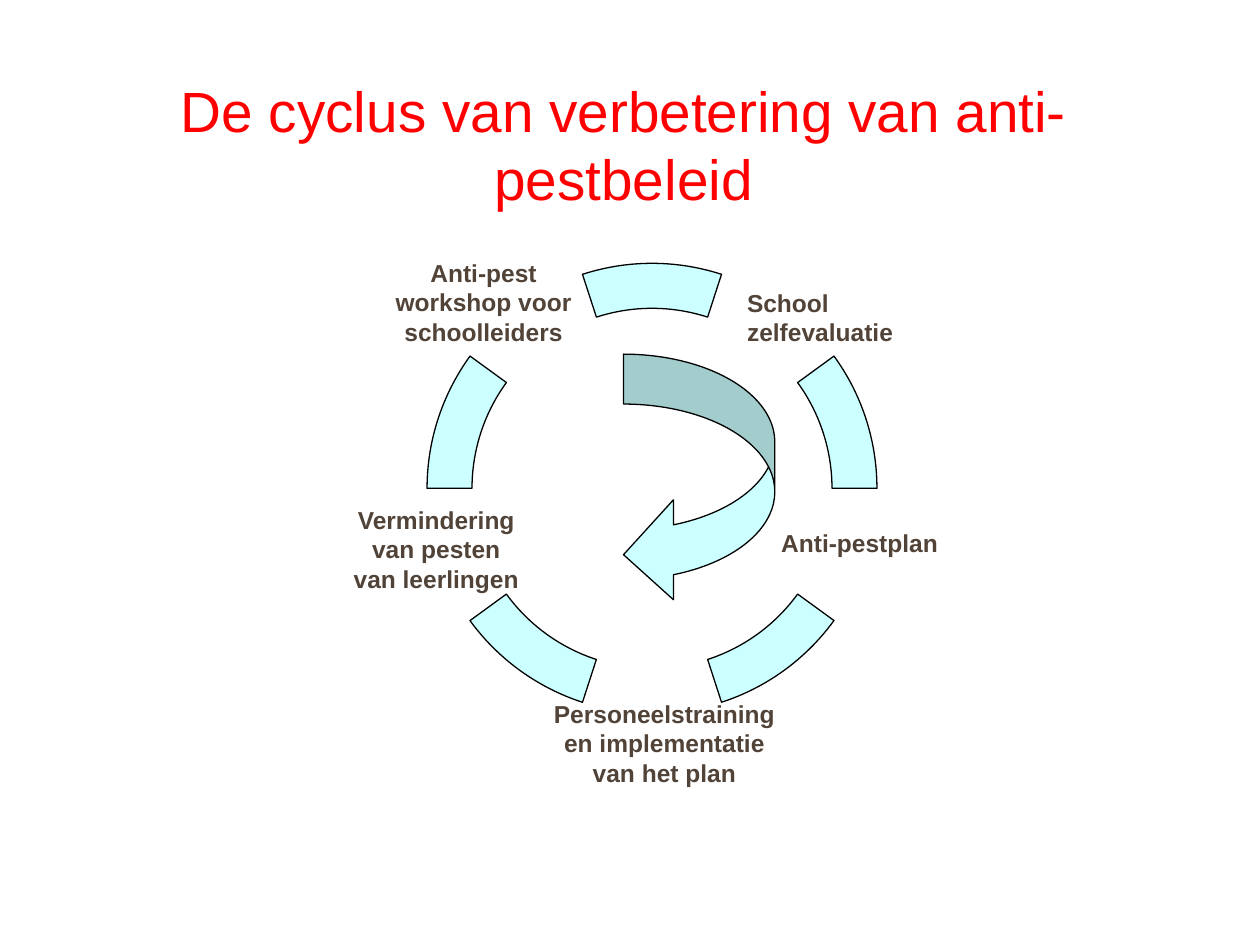
from pptx import Presentation
from pptx.dml.color import RGBColor
from pptx.enum.shapes import MSO_SHAPE
from pptx.enum.text import MSO_ANCHOR, PP_ALIGN
from pptx.util import Cm, Pt

BLOCK_ARC = MSO_SHAPE.BLOCK_ARC
CURVED_ARROW = MSO_SHAPE.CURVED_LEFT_ARROW
MIDDLE = MSO_ANCHOR.MIDDLE
LEFT, CENTER = PP_ALIGN.LEFT, PP_ALIGN.CENTER

COLORS = {"title": "FF0000", "label": "514338", "fill": "CCFFFF", "outline": "000000"}
FONT = "Arial"
TITLE_ONLY_LAYOUT = 5

STEP_COUNT = 5
RING_BOX = (8.61, 5.31, 9.07, 9.07)
RING_THICKNESS = 0.1
ARC_SWEEP = 36
TOP_ARC_START = 252
ARROW_BOX = (12.57, 7.14, 3.05, 5.05)
ARROW_ADJUSTMENTS = (0.33, 0.66, 0.33)

STEPS = [
    ("School zelfevaluatie", (14.88, 5.69, 3.81, 1.4), LEFT),
    ("Anti-pestplan", (15.54, 9.75, 3.58, 2.39), CENTER),
    ("Personeelstraining en implementatie van het plan", (10.92, 14.27, 4.95, 1.42), CENTER),
    ("Vermindering\vvan pesten van leerlingen", (6.93, 10.29, 3.73, 1.55), CENTER),
    ("Anti-pest workshop voor schoolleiders", (7.44, 5.31, 4.62, 1.55), CENTER),
]


def color(name):
    return RGBColor.from_string(COLORS[name])


def to_cm(box):
    return [Cm(length) for length in box]


def format_text(frame, text, size, color_name, align, bold=False):
    frame.word_wrap = True
    frame.vertical_anchor = MIDDLE
    paragraph = frame.paragraphs[0]
    paragraph.text = text
    paragraph.alignment = align
    font = paragraph.font
    font.name, font.size, font.bold = FONT, Pt(size), bold
    font.color.rgb = color(color_name)


def add_title(slide, text):
    title = slide.shapes.title
    title.left, title.top, title.width, title.height = to_cm((1.14, 1.3, 22.86, 3.18))
    format_text(title.text_frame, text, 32.4, "title", CENTER)


def add_cycle_shape(slide, kind, box, adjustments):
    shape = slide.shapes.add_shape(kind, *to_cm(box))
    for index, value in enumerate(adjustments):
        shape.adjustments[index] = value
    shape.shadow.inherit = False
    shape.fill.solid()
    shape.fill.fore_color.rgb = color("fill")
    shape.line.color.rgb = color("outline")
    shape.line.width = Pt(0.75)


def angle_adjustment(degrees):
    """Convert degrees to the adjustment scale: 60000 units a degree, over 100000."""
    return degrees % 360 * 0.6


def add_ring(slide):
    for index in range(STEP_COUNT):
        start = TOP_ARC_START + index * 360 / STEP_COUNT
        adjustments = (
            angle_adjustment(start),
            angle_adjustment(start + ARC_SWEEP),
            RING_THICKNESS,
        )
        add_cycle_shape(slide, BLOCK_ARC, RING_BOX, adjustments)


def add_label(slide, text, box, align):
    frame = slide.shapes.add_textbox(*to_cm(box)).text_frame
    frame.margin_left = frame.margin_right = Cm(0.18)
    frame.margin_top = frame.margin_bottom = Cm(0.1)
    format_text(frame, text, 14, "label", align, bold=True)


def main():
    presentation = Presentation()
    presentation.slide_width, presentation.slide_height = Cm(25.4), Cm(19.05)
    slide = presentation.slides.add_slide(presentation.slide_layouts[TITLE_ONLY_LAYOUT])
    add_title(slide, "De cyclus van verbetering van anti-pestbeleid")
    add_ring(slide)
    for text, box, align in STEPS:
        add_label(slide, text, box, align)
    add_cycle_shape(slide, CURVED_ARROW, ARROW_BOX, ARROW_ADJUSTMENTS)
    presentation.save("out.pptx")


if __name__ == "__main__":
    main()
